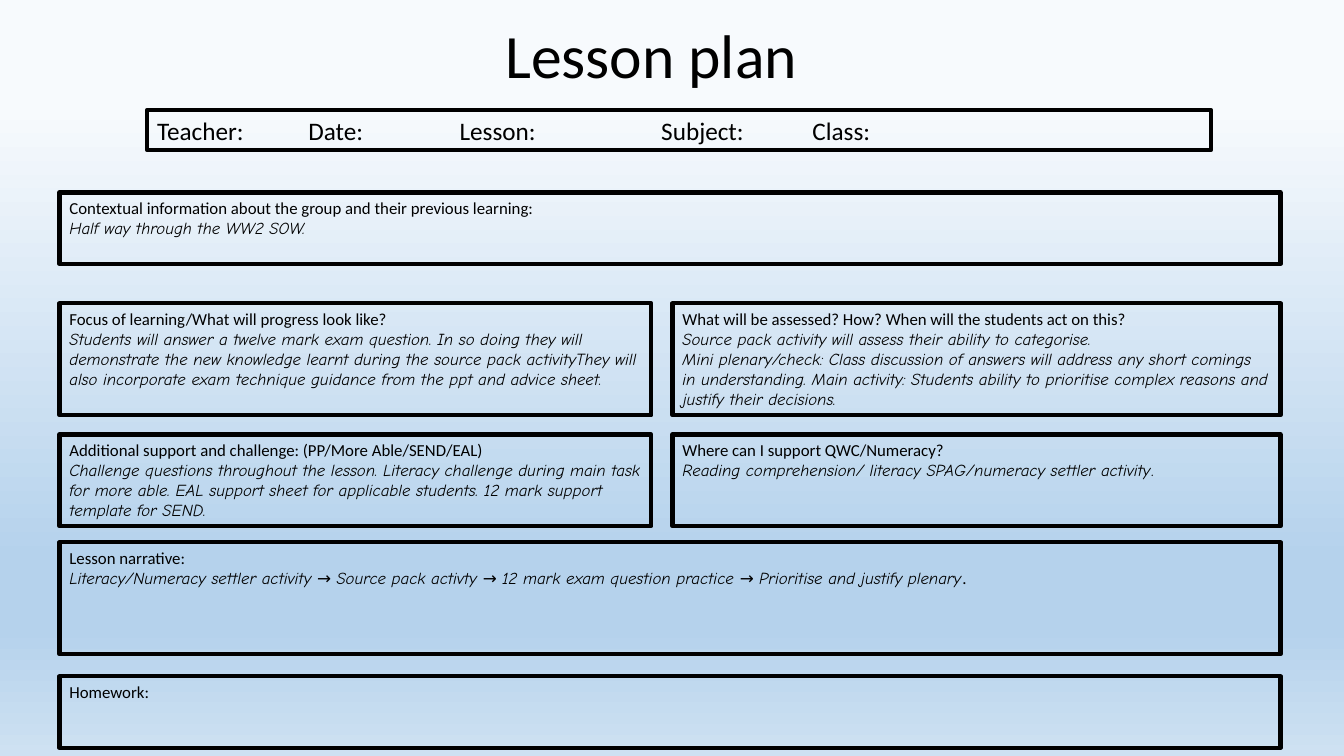
from copy import deepcopy

from pptx import Presentation
from pptx.dml.color import RGBColor
from pptx.enum.text import MSO_ANCHOR, PP_ALIGN
from pptx.oxml.ns import qn
from pptx.util import Inches, Pt

INK = "000000"
HEAD, BODY = "Calibri", "Comic Neue"
SKY = [(14, "F7FAFD"), (74, "B5D2EC"), (83, "B5D2EC"), (100, "CEE1F2")]

COLUMNS = {"left": (0.59, 5.87), "right": (6.67, 6.03), "full": (0.59, 12.11)}
ROWS = {"context": (1.91, 0.71), "learning": (3.01, 1.11), "support": (4.31, 0.91),
        "narrative": (5.38, 1.11), "homework": (6.71, 0.71)}

PANELS = [
    ("full", "context",
     "Contextual information about the group and their previous learning:",
     ["Half way through the WW2 SOW."], None),
    ("left", "learning", "Focus of learning/What will progress look like?",
     ["Students will answer a twelve mark exam question. In so doing they will demonstrate "
      "the new knowledge learnt during the source pack activityThey will also incorporate "
      "exam technique guidance from the ppt and advice sheet."], None),
    ("right", "learning", "What will be assessed? How? When will the students act on this?",
     ["Source pack activity will assess their ability to categorise.",
      "Mini plenary/check: Class discussion of answers will address any short comings in "
      "understanding. Main activity: Students ability to prioritise complex reasons and "
      "justify their decisions."], None),
    ("left", "support", "Additional support and challenge: (PP/More Able/SEND/EAL)",
     ["Challenge questions throughout the lesson. Literacy challenge during main task for "
      "more able. EAL support sheet for applicable students. 12 mark support template for "
      "SEND."], None),
    ("right", "support", "Where can I support QWC/Numeracy?",
     ["Reading comprehension/ literacy SPAG/numeracy settler activity"], BODY),
    ("full", "narrative", "Lesson narrative:",
     ["Literacy/Numeracy settler activity → Source pack activty → 12 mark exam question "
      "practice → Prioritise and justify plenary"], HEAD),
    ("full", "homework", "Homework:", [], None),
]


def rgb(color):
    return RGBColor.from_string(color)


def style(font, name, size, italic=False):
    font.name, font.size, font.italic = name, Pt(size), italic
    font.color.rgb = rgb(INK)


def paint_background(s):
    fill = s.background.fill
    fill.gradient()
    fill.gradient_angle = 270
    stop_list = s._element.find(".//" + qn("a:gsLst"))
    for _ in range(len(SKY) - len(stop_list)):
        stop_list.append(deepcopy(stop_list[0]))
    for stop, (percent, color) in zip(fill.gradient_stops, SKY):
        stop.position = percent / 100
        stop.color.rgb = rgb(color)


def add_box(s, x, y, w, h, border=True):
    sp = s.shapes.add_textbox(Inches(x), Inches(y), Inches(w), Inches(h))
    sp.text_frame.word_wrap = True
    if border:
        sp.line.color.rgb = rgb(INK)
        sp.line.width = Pt(3)
    return sp.text_frame


def write(p, text, name, size, italic=False):
    p.add_run().text = text
    style(p.font, name, size, italic)


def add_title(s, text):
    tf = add_box(s, 1.46, 0.27, 10, 0.69, border=False)
    tf.vertical_anchor = MSO_ANCHOR.BOTTOM
    p = tf.paragraphs[0]
    p.alignment, p.line_spacing = PP_ALIGN.CENTER, 0.9
    write(p, text, HEAD, 44)


def add_details(s, text):
    tf = add_box(s, 1.46, 1.09, 10.55, 0.4)
    write(tf.paragraphs[0], text, HEAD, 18)


def add_panel(s, column, row, heading, notes, stop_font):
    (x, w), (y, h) = COLUMNS[column], ROWS[row]
    tf = add_box(s, x, y, w, h)
    write(tf.paragraphs[0], heading, HEAD, 12)
    for note in notes:
        p = tf.add_paragraph()
        write(p, note, BODY, 12, italic=True)
    if stop_font:
        r = p.add_run()
        r.text = "."
        style(r.font, stop_font, 12)


def main():
    prs = Presentation()
    prs.slide_width, prs.slide_height = Inches(13.33), Inches(7.5)
    s = prs.slides.add_slide(prs.slide_layouts[6])
    paint_background(s)
    add_title(s, "Lesson plan")
    add_details(s, "Teacher:\t\tDate:\t\tLesson:\t\t\tSubject:\t\tClass:")
    for panel in PANELS:
        add_panel(s, *panel)
    prs.save("out.pptx")


if __name__ == "__main__":
    main()
